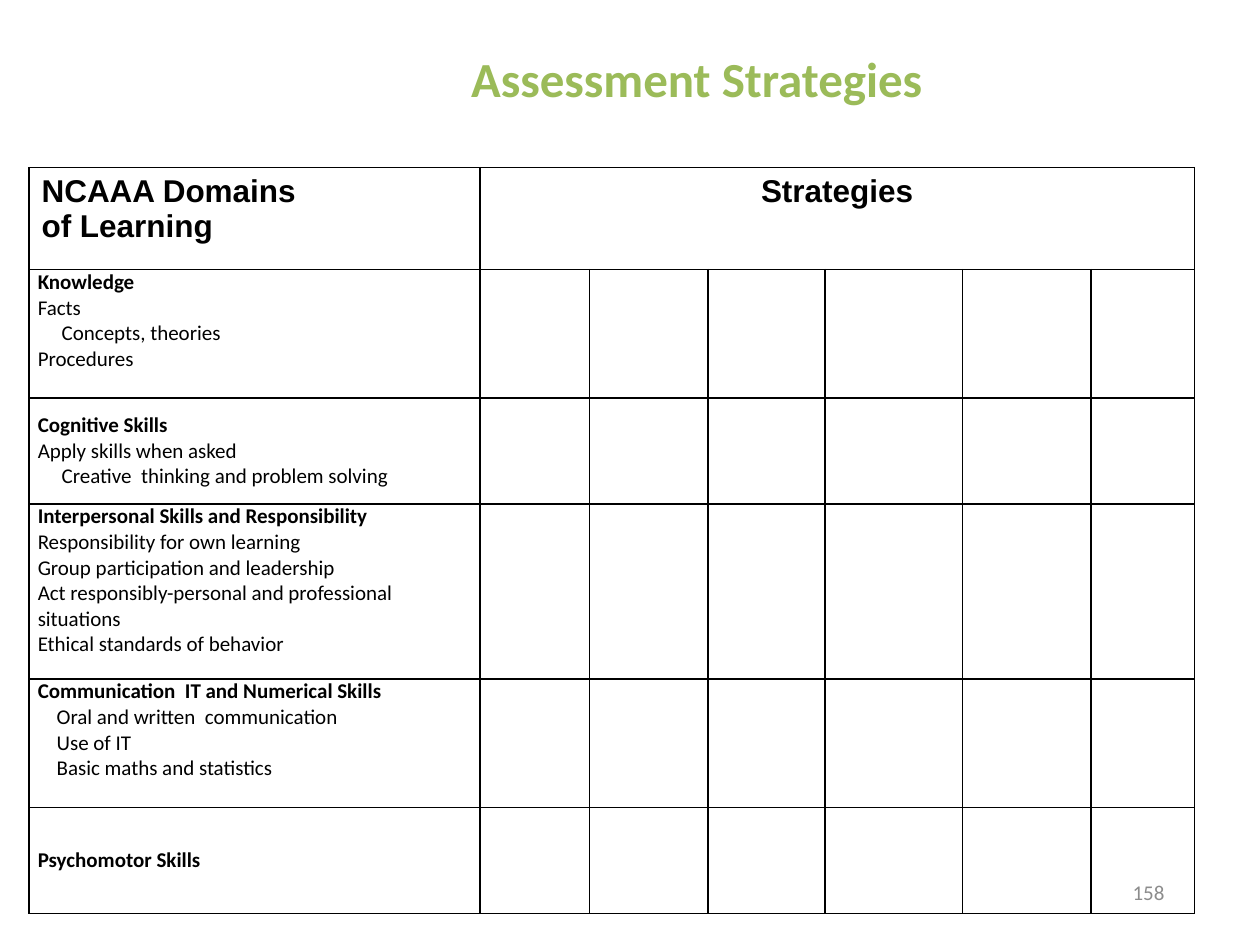
from lxml import etree
from pptx import Presentation
from pptx.dml.color import RGBColor
from pptx.enum.text import MSO_ANCHOR, PP_ALIGN
from pptx.oxml.ns import qn
from pptx.util import Inches, Pt

TOP, MIDDLE = MSO_ANCHOR.TOP, MSO_ANCHOR.MIDDLE
LEFT, CENTER, RIGHT = PP_ALIGN.LEFT, PP_ALIGN.CENTER, PP_ALIGN.RIGHT

COLORS = {"title": "9BBB59", "text": "000000", "border": "000000",
          "cell": "FFFFFF", "number": "8C8C8C"}

COL_WIDTHS = [3.58, 0.87, 0.94, 0.93, 1.09, 1.02, 0.82]
HEADER_HEIGHT = 0.81
DOMAINS = [
    (1.02, TOP, "Knowledge",
     [("Facts", 0), ("Concepts, theories", 0.19), ("Procedures", 0)]),
    (0.84, MIDDLE, "Cognitive Skills",
     [("Apply skills when asked", 0),
      ("Creative  thinking and problem solving", 0.19)]),
    (1.39, TOP, "Interpersonal Skills and Responsibility",
     [("Responsibility for own learning", 0),
      ("Group participation and leadership", 0),
      ("Act responsibly-personal and professional situations", 0),
      ("Ethical standards of behavior", 0)]),
    (1.02, TOP, "Communication  IT and Numerical Skills",
     [("Oral and written  communication", 0.15), ("Use of IT", 0.15),
      ("Basic maths and statistics", 0.15)]),
    (0.84, MIDDLE, "Psychomotor Skills", []),
]


def add_run(p, text, size, color, font="Calibri", bold=False):
    r = p.add_run()
    r.text = text
    r.font.size = Pt(size)
    r.font.name = font
    r.font.bold = bold
    r.font.color.rgb = RGBColor.from_string(COLORS[color])


def next_paragraph(tf, first):
    return tf.paragraphs[0] if first else tf.add_paragraph()


def place(shape, box):
    shape.left, shape.top, shape.width, shape.height = map(Inches, box)


def add_title(s, box):
    title = s.shapes.title
    place(title, box)
    tf = title.text_frame
    tf.vertical_anchor = MIDDLE
    p = tf.paragraphs[0]
    p.alignment = CENTER
    add_run(p, "Assessment Strategies", 28, "title", bold=True)


def style_cell(cell, anchor=TOP, side=0.07, edge=0):
    cell.margin_left = cell.margin_right = Inches(side)
    cell.margin_top = cell.margin_bottom = Inches(edge)
    cell.vertical_anchor = anchor
    tc_pr = cell._tc.get_or_add_tcPr()
    for tag in ("a:lnL", "a:lnR", "a:lnT", "a:lnB"):
        ln = etree.SubElement(tc_pr, qn(tag), w=str(Pt(1)))
        fill = etree.SubElement(ln, qn("a:solidFill"))
        etree.SubElement(fill, qn("a:srgbClr"), val=COLORS["border"])
    cell.fill.solid()
    cell.fill.fore_color.rgb = RGBColor.from_string(COLORS["cell"])


def fill_header(cell, lines, align):
    for i, line in enumerate(lines):
        p = next_paragraph(cell.text_frame, i == 0)
        p.alignment = align
        add_run(p, line, 18, "text", "Arial", True)


def fill_domain(cell, heading, items):
    for i, (text, indent) in enumerate([(heading, 0)] + items):
        p = next_paragraph(cell.text_frame, i == 0)
        if indent:
            p._p.get_or_add_pPr().set("marL", str(Inches(indent)))
        add_run(p, text, 12, "text", bold=i == 0)


def add_domain_table(s, box):
    frame = s.shapes.add_table(len(DOMAINS) + 1, len(COL_WIDTHS),
                               *map(Inches, box))
    table = frame.table
    table.first_row = table.horz_banding = False
    for col, width in zip(table.columns, COL_WIDTHS):
        col.width = Inches(width)
    heights = [HEADER_HEIGHT] + [domain[0] for domain in DOMAINS]
    for row, height in zip(table.rows, heights):
        row.height = Inches(height)

    for cell in table.rows[0].cells:
        style_cell(cell, side=0.1, edge=0.05)
    table.cell(0, 1).merge(table.cell(0, len(COL_WIDTHS) - 1))
    fill_header(table.cell(0, 0), ["NCAAA Domains", "of Learning"], LEFT)
    fill_header(table.cell(0, 1), ["Strategies"], CENTER)

    for i, (_, anchor, heading, items) in enumerate(DOMAINS, start=1):
        for cell in table.rows[i].cells:
            style_cell(cell, anchor)
        fill_domain(table.cell(i, 0), heading, items)


def add_page_number(s, box):
    tf = s.shapes.add_textbox(*map(Inches, box)).text_frame
    tf.word_wrap = True
    tf.vertical_anchor = MIDDLE
    p = tf.paragraphs[0]
    p.alignment = RIGHT
    add_run(p, "158", 12, "number")


def main():
    prs = Presentation()
    prs.slide_width, prs.slide_height = Inches(10), Inches(7.5)
    s = prs.slides.add_slide(prs.slide_layouts.get_by_name("Title Only"))
    add_title(s, (2.03, 0.16, 7, 0.92))
    add_domain_table(s, (0.23, 1.33, 9.25, 5.9))
    add_page_number(s, (7.92, 6.83, 1.42, 0.5))
    prs.save("out.pptx")


if __name__ == "__main__":
    main()
